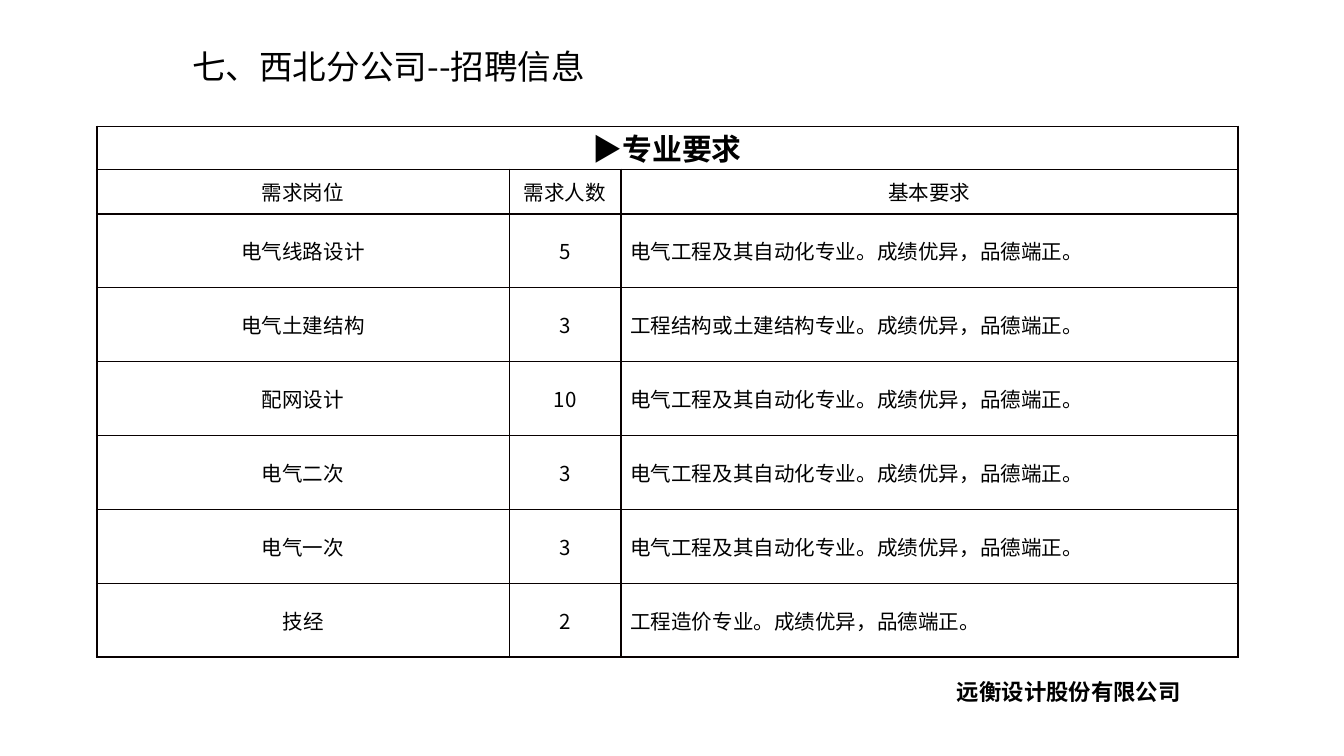
from lxml import etree
from pptx import Presentation
from pptx.dml.color import RGBColor
from pptx.enum import text
from pptx.oxml import ns
from pptx.util import Inches, Pt

FONT = "Noto Sans CJK SC"


def add_run(paragraph, content, size, bold=False, color="000000"):
    run = paragraph.add_run()
    run.text = content
    run.font.name = FONT
    run.font.size = Pt(size)
    run.font.bold = bold
    run.font.color.rgb = RGBColor.from_string(color)
    etree.SubElement(run.font._element, ns.qn("a:ea"), typeface=FONT)


def add_borders(cell, color="080000", width=1):
    properties = cell._tc.get_or_add_tcPr()
    for side in ("lnL", "lnR", "lnT", "lnB"):
        line = etree.SubElement(properties, ns.qn("a:" + side), w=str(Pt(width)))
        fill = etree.SubElement(line, ns.qn("a:solidFill"))
        etree.SubElement(fill, ns.qn("a:srgbClr"), val=color)


# 16:9 slide
presentation = Presentation()
presentation.slide_width = Inches(10)
presentation.slide_height = Inches(10 * 9 / 16)
slide = presentation.slides.add_slide(presentation.slide_layouts[5])

# Title
title = slide.shapes.title
title.left, title.top = Inches(1.33), Inches(0.29)
title.width, title.height = Inches(3.25), Inches(0.72)
frame = title.text_frame
frame.word_wrap = False
frame.auto_size = text.MSO_AUTO_SIZE.NONE
frame.vertical_anchor = text.MSO_ANCHOR.TOP
frame.paragraphs[0].alignment = text.PP_ALIGN.LEFT
add_run(frame.paragraphs[0], "七、西北分公司--招聘信息", 18)

# Recruitment table
ELECTRICAL = "电气工程及其自动化专业"
CONDUCT = "。成绩优异，品德端正。"
positions = [
    ("电气线路设计", "5", ELECTRICAL),
    ("电气土建结构", "3", "工程结构或土建结构专业"),
    ("配网设计", "10", ELECTRICAL),
    ("电气二次", "3", ELECTRICAL),
    ("电气一次", "3", ELECTRICAL),
    ("技经", "2", "工程造价专业"),
]
rows = [("▶专业要求", "", ""), ("需求岗位", "需求人数", "基本要求")]
rows += [(job, count, major + CONDUCT) for job, count, major in positions]
column_widths = [3.07, 0.83, 4.59]
row_heights = [0.31, 0.33] + [0.55] * len(positions)

table = slide.shapes.add_table(
    len(rows), len(column_widths), Inches(0.72), Inches(0.94),
    Inches(sum(column_widths)), Inches(sum(row_heights))).table
for column, width in zip(table.columns, column_widths):
    column.width = Inches(width)
for row, height in zip(table.rows, row_heights):
    row.height = Inches(height)
table.cell(0, 0).merge(table.cell(0, 2))

for row_index, row in enumerate(rows):
    for column_index, content in enumerate(row):
        cell = table.cell(row_index, column_index)
        add_borders(cell)
        cell.fill.background()
        cell.margin_left = cell.margin_right = Inches(0.07)
        cell.margin_top = cell.margin_bottom = 0
        cell.vertical_anchor = text.MSO_ANCHOR.MIDDLE
        if not content:
            continue
        is_requirement = row_index > 1 and column_index == 2
        paragraph = cell.text_frame.paragraphs[0]
        paragraph.alignment = text.PP_ALIGN.LEFT if is_requirement else text.PP_ALIGN.CENTER
        is_heading = row_index == 0
        add_run(paragraph, content, 16 if is_heading else 11, bold=is_heading)

# Company name
company = slide.shapes.add_textbox(Inches(6.64), Inches(5), Inches(2.97), Inches(0.3))
frame = company.text_frame
frame.word_wrap = True
frame.auto_size = text.MSO_AUTO_SIZE.SHAPE_TO_FIT_TEXT
frame.margin_left = Inches(0.48)
add_run(frame.paragraphs[0], "远衡设计股份有限公司", 12, bold=True)

presentation.save("out.pptx")
